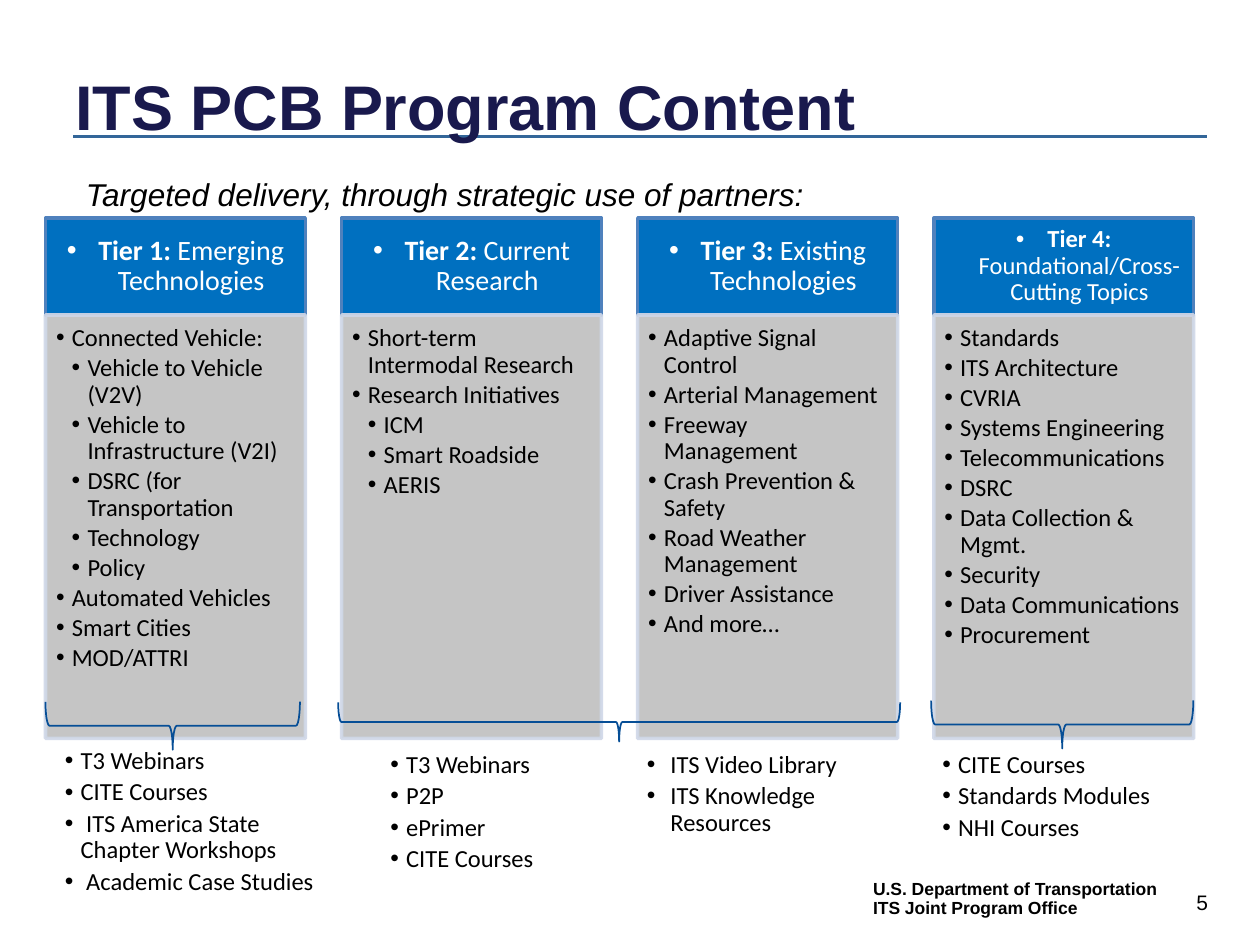
from lxml.etree import SubElement
from pptx import Presentation
from pptx.dml.color import RGBColor
from pptx.enum.shapes import MSO_CONNECTOR, MSO_SHAPE
from pptx.enum.text import MSO_ANCHOR, PP_ALIGN
from pptx.oxml.ns import qn
from pptx.util import Pt


def set_frame(shape, margins, anchor=MSO_ANCHOR.TOP):
    frame = shape.text_frame
    frame.word_wrap = True
    frame.vertical_anchor = anchor
    frame.margin_left, frame.margin_top, frame.margin_right, frame.margin_bottom = map(Pt, margins)
    return frame


def format_paragraph(paragraph, size, font_name, hex_color, indent=None):
    if indent:
        properties = paragraph._p.get_or_add_pPr()
        properties.set("marL", str(Pt(indent[0])))
        properties.set("indent", str(Pt(-indent[1])))
        SubElement(properties, qn("a:buFont")).set("typeface", "Arial")
        SubElement(properties, qn("a:buChar")).set("char", "•")
        paragraph.line_spacing = 0.9
    for run in paragraph.runs:
        run.font.size = Pt(size)
        run.font.name = font_name
        run.font.color.rgb = RGBColor.from_string(hex_color)


presentation = Presentation()
presentation.slide_width, presentation.slide_height = Pt(720), Pt(540)
slide = presentation.slides.add_slide(presentation.slide_layouts[6])
shapes = slide.shapes

rule = shapes.add_connector(MSO_CONNECTOR.STRAIGHT, Pt(42), Pt(78), Pt(690), Pt(78))
rule.line.color.rgb = RGBColor.from_string("336699")
rule.line.width = Pt(1.5)
SubElement(rule._element.spPr, qn("a:effectLst"))

labels = [
    (["5"], (666, 504.7, 42, 21.6), 12, "000000", False, False),
    (["U.S. Department of Transportation", "ITS Joint Program Office"],
     (491.8, 501.1, 186, 28), 10, "000000", True, False),
    (["ITS PCB Program Content"], (36, 30.2, 648, 59.8), 36, "19194D", True, False),
    (["Targeted delivery, through strategic use of partners:"],
     (42, 96.5, 428.4, 28.8), 18, "000000", False, True),
]
for lines, box, size, hex_color, bold, italic in labels:
    label = shapes.add_textbox(*map(Pt, box))
    frame = set_frame(label, (7.2, 3.6, 7.2, 3.6), MSO_ANCHOR.MIDDLE if size == 36 else MSO_ANCHOR.TOP)
    frame.word_wrap = not italic
    frame.text = "\n".join(lines)
    for index, paragraph in enumerate(frame.paragraphs):
        format_paragraph(paragraph, size, "Arial", hex_color)
        paragraph.runs[0].font.bold = bold
        paragraph.runs[0].font.italic = italic
        if size == 10:
            paragraph.line_spacing = Pt(9)
            paragraph.space_before = Pt(2 * index)
        if size == 12:
            paragraph.alignment = PP_ALIGN.CENTER

tiers = [
    ("Tier 1: ", "Emerging Technologies", 16, [
        (1, "Connected Vehicle:"), (2, "Vehicle to Vehicle (V2V)"),
        (2, "Vehicle to Infrastructure (V2I)"), (2, "DSRC (for Transportation"),
        (2, "Technology"), (2, "Policy"), (1, "Automated Vehicles"),
        (1, "Smart Cities"), (1, "MOD/ATTRI")]),
    ("Tier 2: ", "Current Research", 16, [
        (1, "Short-term Intermodal Research"), (1, "Research Initiatives"),
        (2, "ICM"), (2, "Smart Roadside"), (2, "AERIS")]),
    ("Tier 3: ", "Existing Technologies", 16, [
        (1, "Adaptive Signal Control"), (1, "Arterial Management"),
        (1, "Freeway Management"), (1, "Crash Prevention & Safety"),
        (1, "Road Weather Management"), (1, "Driver Assistance"), (1, "And more…")]),
    ("Tier 4: ", "Foundational/Cross-Cutting Topics", 14, [
        (1, "Standards"), (1, "ITS Architecture"), (1, "CVRIA"),
        (1, "Systems Engineering"), (1, "Telecommunications"), (1, "DSRC"),
        (1, "Data Collection & Mgmt."), (1, "Security"),
        (1, "Data Communications"), (1, "Procurement")]),
]
for column, (tier, topic, size, items) in enumerate(tiers):
    left = 26 + 169.2 * column
    header = shapes.add_shape(MSO_SHAPE.RECTANGLE, Pt(left), Pt(124.6), Pt(148.5), Pt(55.4))
    body = shapes.add_shape(MSO_SHAPE.RECTANGLE, Pt(left), Pt(180), Pt(148.5), Pt(242))
    for shape, fill, line in ((header, "0070C0", "4F81BD"), (body, "BFBFBF", "D0D8E8")):
        shape.shadow.inherit = False
        shape.fill.solid()
        shape.fill.fore_color.rgb = RGBColor.from_string(fill)
        shape.line.color.rgb = RGBColor.from_string(line)
        shape.line.width = Pt(2)
    for color_element in body._element.spPr.iter(qn("a:srgbClr")):
        SubElement(color_element, qn("a:alpha")).set("val", "90000")

    frame = set_frame(header, (size / 2, 5, size / 2, 5), MSO_ANCHOR.MIDDLE)
    paragraph = frame.paragraphs[0]
    paragraph.alignment = PP_ALIGN.CENTER
    for text, bold in ((tier, True), (topic, False)):
        run = paragraph.add_run()
        run.text = text
        run.font.bold = bold
    format_paragraph(paragraph, size, "Calibri", "FFFFFF", (18, 18))

    frame = set_frame(body, (6, 6, 8, 9))
    frame.text = "\n".join(text for level, text in items)
    for paragraph, (level, text) in zip(frame.paragraphs, items):
        paragraph.alignment = PP_ALIGN.LEFT
        paragraph.level = level
        paragraph.space_before = Pt(0)
        paragraph.space_after = Pt(2)
        format_paragraph(paragraph, 14, "Calibri", "000000", (9 * level, 9))

deliveries = [
    ((531.4, 426.2, 152, 60), (9, 9), ["CITE Courses", "Standards Modules", "NHI Courses"]),
    ((216, 426.2, 166, 78.5), (9, 9), ["T3 Webinars", "P2P", "ePrimer", "CITE Courses"]),
    ((30, 424.1, 164, 97), (9, 9),
     ["T3 Webinars", "CITE Courses", " ITS America State Chapter Workshops", " Academic Case Studies"]),
    ((353.5, 426.2, 163, 56), (22.5, 13.5), ["ITS Video Library", "ITS Knowledge Resources"]),
]
for box, indent, items in deliveries:
    frame = set_frame(shapes.add_textbox(*map(Pt, box)), (7.2, 3.6, 7.2, 3.6))
    frame.text = "\n".join(items)
    for index, paragraph in enumerate(frame.paragraphs):
        paragraph.space_before = Pt(2.8 if index else 0)
        format_paragraph(paragraph, 14, "Calibri", "000000", indent)

for box in ((593.3, 339.1, 27.4, 149.8), (85, 342, 27.4, 145.4), (342.7, 252, 22.3, 321.1)):
    brace = shapes.add_shape(MSO_SHAPE.LEFT_BRACE, *map(Pt, box))
    brace.rotation = 270
    brace.shadow.inherit = False
    brace.fill.background()
    brace.line.color.rgb = RGBColor.from_string("064E96")
    brace.line.width = Pt(1)

presentation.save("out.pptx")
